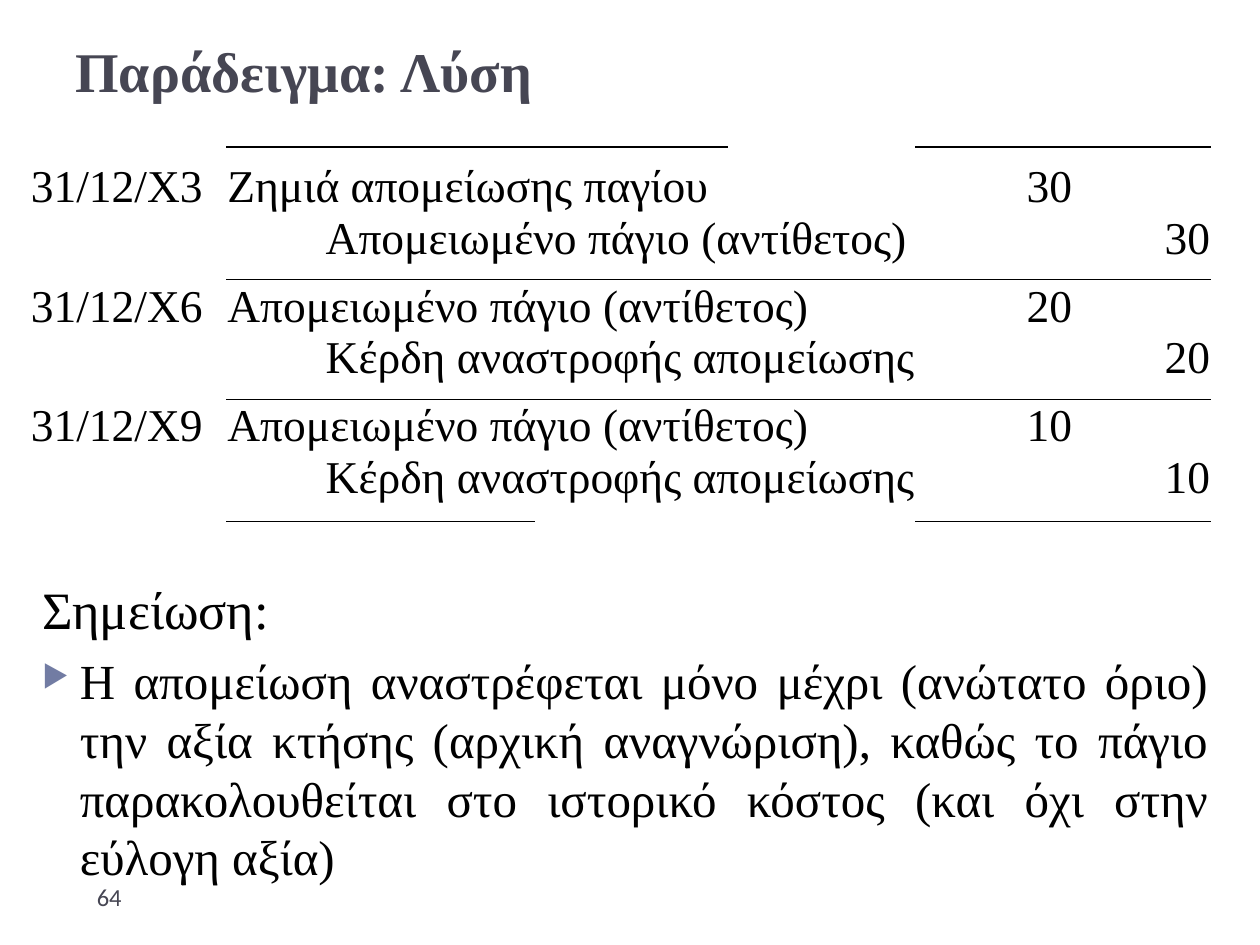
from lxml import etree
from pptx import Presentation
from pptx import util as u
from pptx.dml.color import RGBColor
from pptx.enum import text
from pptx.oxml import ns

BLACK = RGBColor(0x00, 0x00, 0x00)
SLATE = RGBColor(0x46, 0x46, 0x53)
BULLET_BLUE = RGBColor(0x72, 0x7C, 0xA3)
SERIF = "Times New Roman"
ALIGN = text.PP_ALIGN
ANCHOR = text.MSO_ANCHOR

deck = Presentation()
deck.slide_width, deck.slide_height = u.Inches(10), u.Inches(7.5)
GRID = deck.slide_width // 100
page = deck.slides.add_slide(deck.slide_layouts[6])


def add_element(parent, tag, **attributes):
    return etree.SubElement(parent, ns.qn(tag), attributes)


def write(para, words, size, color=BLACK, name=SERIF, bold=False):
    span = para.add_run()
    span.text = words
    span.font.color.rgb = color
    for key, value in {"size": u.Pt(size), "name": name, "bold": bold}.items():
        setattr(span.font, key, value)


labels = [
    ((5, 2.3, 90, 6.4), ANCHOR.BOTTOM, ("Παράδειγμα: Λύση", 32, SLATE, SERIF, True)),
    ((6.7, 69.5, 21.7, 4), ANCHOR.TOP, ("64", 14, SLATE, "Calibri")),
]
for place, anchor, words in labels:
    box = page.shapes.add_textbox(*[int(value * GRID) for value in place])
    box.text_frame.word_wrap = True
    box.text_frame.vertical_anchor = anchor
    write(box.text_frame.paragraphs[0], *words)

note = page.shapes.add_textbox(*[int(value * GRID) for value in (2.35, 45.3, 94.5, 24.2)])
note.text_frame.word_wrap = True
heading = note.text_frame.paragraphs[0]
remark = note.text_frame.add_paragraph()
for para in (heading, remark):
    properties = para._p.get_or_add_pPr()
    properties.set("marL", str(3 * GRID))
    properties.set("indent", str(-3 * GRID))
remark.alignment = ALIGN.JUSTIFY
remark.space_before = u.Pt(6)
properties = remark._p.get_or_add_pPr()
bullet_color = add_element(properties, "a:buClr")
add_element(bullet_color, "a:srgbClr", val=str(BULLET_BLUE))
add_element(properties, "a:buSzPct", val="62000")
add_element(properties, "a:buChar", char="▶")
write(heading, "Σημείωση:", 30)
write(remark, "Η απομείωση αναστρέφεται μόνο μέχρι (ανώτατο όριο) την αξία κτήσης "
      "(αρχική αναγνώριση), καθώς το πάγιο παρακολουθείται στο ιστορικό κόστος "
      "(και όχι στην εύλογη αξία)", 28)

column_widths = [15.6, 7.8, 3.3, 13.4, 15.35, 14.85, 12.55, 10.95]
row_heights = [1.45, 5.15, 4.1, 1.3, 4.1, 4.1, 1.3, 4.1, 4.1, 1.5]
frame = page.shapes.add_table(
    len(row_heights), len(column_widths), int(2.35 * GRID), int(10.2 * GRID),
    int(sum(column_widths) * GRID), int(sum(row_heights) * GRID))
journal = frame.table
journal.first_row = journal.horz_banding = False
journal._tbl.tblPr.find(ns.qn("a:tableStyleId")).text = "{2D5ABB26-0587-4C30-8999-92F81FD0307C}"
for column, width in zip(journal.columns, column_widths):
    column.width = int(width * GRID)
for row, height in zip(journal.rows, row_heights):
    row.height = int(height * GRID)

entries = [
    ("31/12/Χ3", "Ζημιά απομείωσης παγίου", "Απομειωμένο πάγιο (αντίθετος)", "30"),
    ("31/12/Χ6", "Απομειωμένο πάγιο (αντίθετος)", "Κέρδη αναστροφής απομείωσης", "20"),
    ("31/12/Χ9", "Απομειωμένο πάγιο (αντίθετος)", "Κέρδη αναστροφής απομείωσης", "10"),
]
wording = {}
merges = [(0, 1, 2), (1, 1, 4), (4, 1, 5), (7, 1, 5), (9, 2, 3)]
merges += [(row, 4, 5) for row in (3, 6, 9)] + [(row, 1, 3) for row in (3, 6)]
for index, (date, debit, credit, amount) in enumerate(entries):
    row = 1 + 3 * index
    wording.update({(row, 0): date, (row, 1): debit, (row, 6): amount,
                    (row + 1, 2): credit, (row + 1, 7): amount})
    merges.append((row + 1, 2, 6))

rules = {0: (1, 2, 3, 4, 6, 7), 3: range(1, 8), 6: range(1, 8), 9: (1, 2, 3, 6, 7)}
cell_format = {
    "margin_left": int(0.1 * GRID), "margin_right": int(0.1 * GRID),
    "margin_top": int(0.1 * GRID), "margin_bottom": 0,
    "vertical_anchor": ANCHOR.BOTTOM,
}
for row in range(len(row_heights)):
    for column in range(len(column_widths)):
        cell = journal.cell(row, column)
        for key, value in cell_format.items():
            setattr(cell, key, value)
        properties = cell._tc.get_or_add_tcPr()
        ruled = {"a:lnT": column in rules.get(row - 1, ()), "a:lnB": column in rules.get(row, ())}
        for side in ("a:lnL", "a:lnR", "a:lnT", "a:lnB"):
            border = add_element(properties, side, w=str(u.Pt(1)))
            if ruled.get(side):
                paint = add_element(border, "a:solidFill")
                add_element(paint, "a:srgbClr", val=str(BLACK))
            else:
                add_element(border, "a:noFill")
        cell.fill.background()
        para = cell.text_frame.paragraphs[0]
        if (row, column) in wording:
            para.alignment = ALIGN.RIGHT if column > 5 else ALIGN.LEFT
            para.line_spacing = 0.92
            write(para, wording[row, column], 26)
        else:
            add_element(para._p, "a:endParaRPr", sz="500")

for row, first, last in merges:
    journal.cell(row, first).merge(journal.cell(row, last))

deck.save("out.pptx")
